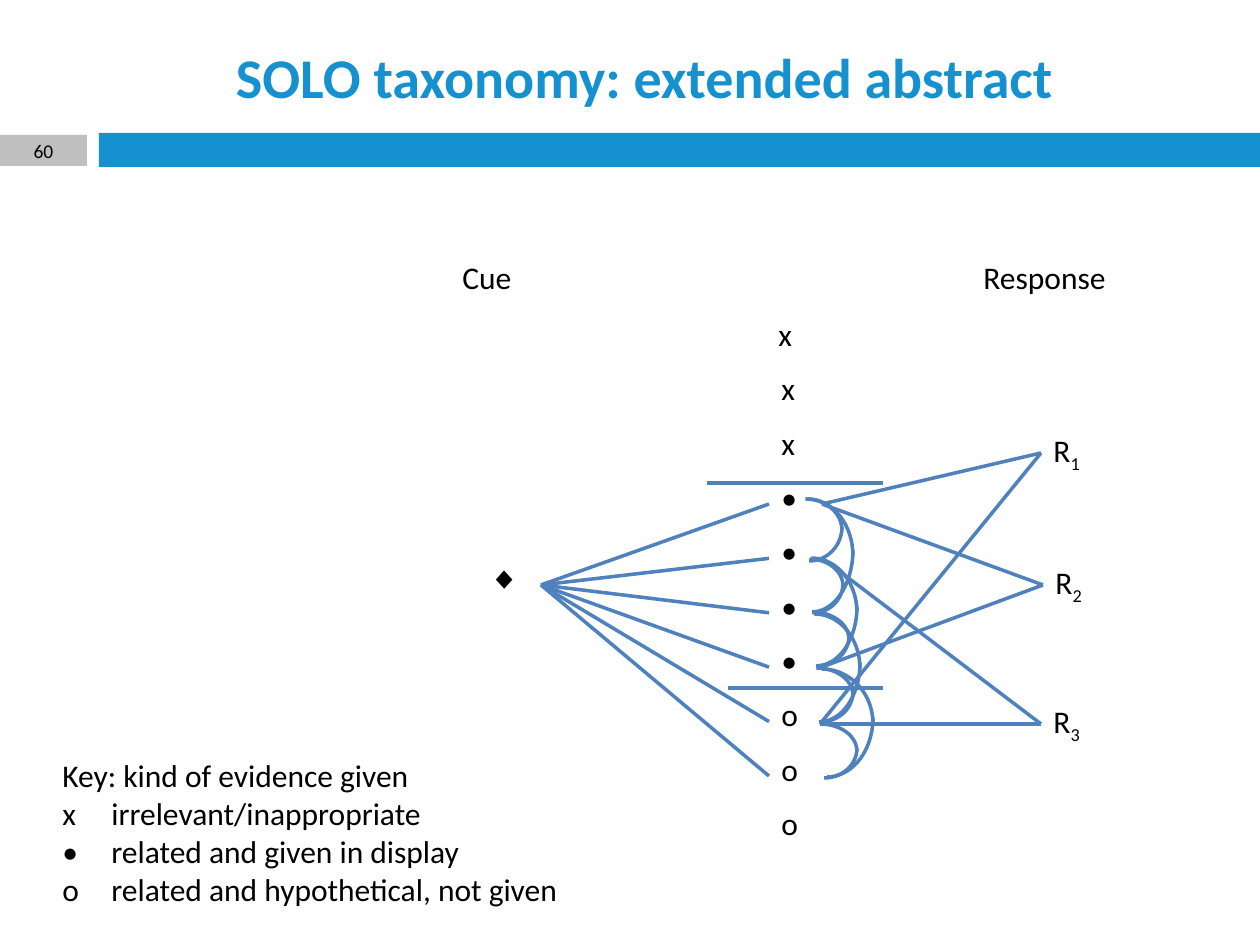
import dataclasses

import pptx
import pptx.dml.color
import pptx.enum.shapes
import pptx.enum.text
import pptx.oxml.ns
import pptx.util
from lxml import etree

SHAPES = pptx.enum.shapes.MSO_SHAPE
ALIGN = pptx.enum.text.PP_ALIGN
ANCHOR = pptx.enum.text.MSO_ANCHOR
EMU_PER_PX = 914400 / 126


@dataclasses.dataclass(frozen=True)
class Theme:
    accent: str = "1691D0"
    grey: str = "BFBFBF"
    stroke: str = "4F81BD"
    ink: str = "000000"
    font: str = "Calibri"
    symbol_font: str = "Arial"
    title_size: float = 32
    body_size: float = 18
    number_size: float = 11.1
    stroke_width: float = 2


def emu(*lengths):
    return [pptx.util.Emu(round(length * EMU_PER_PX)) for length in lengths]


def rgb(code):
    return pptx.dml.color.RGBColor.from_string(code)


def add_child(parent, tag, **attributes):
    return etree.SubElement(parent, pptx.oxml.ns.qn(tag), **attributes)


def write(para, text, *, font, size, color, bold=False, baseline=None):
    span = para.add_run()
    span.text = text
    span.font.name = font
    span.font.size = pptx.util.Pt(size)
    span.font.bold = bold
    span.font.color.rgb = rgb(color)
    if baseline is not None:
        span.font._element.set("baseline", str(baseline * 1000))


class Painter:
    def __init__(self, page, theme):
        self.page = page
        self.theme = theme

    def text(self, left, top, width, height, lines, *, size=None, font=None, color=None,
             bold=False, align=ALIGN.LEFT, anchor=ANCHOR.TOP, tab=None, subscript=None):
        """Write one paragraph per line; the subscript follows the last one."""
        theme = self.theme
        style = dict(font=font or theme.font, size=size or theme.body_size,
                     color=color or theme.ink, bold=bold)
        box = self.page.shapes.add_textbox(*emu(left, top, width, height))
        frame = box.text_frame
        frame.word_wrap = True
        frame.vertical_anchor = anchor
        for index, line in enumerate(lines):
            para = frame.add_paragraph() if index else frame.paragraphs[0]
            para.alignment = align
            if tab:
                stops = add_child(para._p.get_or_add_pPr(), "a:tabLst")
                add_child(stops, "a:tab", pos=str(emu(tab)[0]), algn="l")
            write(para, line, **style)
        if subscript:
            write(para, subscript, baseline=-25, **style)

    def bar(self, left, top, width, height, color):
        bar = self.page.shapes.add_shape(SHAPES.RECTANGLE, *emu(left, top, width, height))
        bar.shadow.inherit = False
        bar.fill.solid()
        bar.fill.fore_color.rgb = rgb(color)
        bar.line.fill.background()

    def stroke(self, shape):
        shape.line.color.rgb = rgb(self.theme.stroke)
        shape.line.width = pptx.util.Pt(self.theme.stroke_width)

    def line(self, start, end):
        line = self.page.shapes.add_connector(
            pptx.enum.shapes.MSO_CONNECTOR.STRAIGHT, *emu(*start, *end))
        self.stroke(line)
        add_child(line._element.spPr, "a:effectLst")

    def arc(self, left, top, width, height, rotation=0):
        arc = self.page.shapes.add_shape(SHAPES.ARC, *emu(left, top, width, height))
        arc.shadow.inherit = False
        arc.fill.background()
        arc.rotation = rotation
        self.stroke(arc)

    def loop(self, left, top, width, height):
        """Join an upper and a lower quarter arc that share their right and bottom edges."""
        self.arc(left, top, width, height)
        lower_width, lower_height = width * 0.9, height * 1.1
        center_x = left + width - lower_width / 2
        center_y = top + height - lower_height / 2
        # The quarter turn swaps the sides of the box.
        self.arc(center_x - lower_height / 2, center_y - lower_width / 2,
                 lower_height, lower_width, rotation=90)


def draw_header(painter):
    theme = painter.theme
    painter.bar(99, 133, 1161, 34, theme.accent)
    painter.bar(0, 135, 87, 31, theme.grey)
    painter.text(99, 33, 1091, 86, ["SOLO taxonomy: extended abstract"],
                 size=theme.title_size, color=theme.accent, bold=True,
                 align=ALIGN.CENTER, anchor=ANCHOR.MIDDLE)
    painter.text(0, 135, 87, 31, ["60"], size=theme.number_size,
                 align=ALIGN.CENTER, anchor=ANCHOR.MIDDLE)


def draw_evidence(painter):
    for row, mark in enumerate("xxx••••ooo"):
        painter.text(769 if row else 766, 309 + row * 54.3, 53, 63, [mark])
    for left, y in ((707, 483), (728, 688)):
        painter.line((left, y), (883, y))


def draw_labels(painter):
    painter.text(450, 252, 126, 63, ["Cue"])
    painter.text(971, 252, 221, 63, ["Response"])
    painter.text(476, 553, 64, 63, ["◆"], font=painter.theme.symbol_font)
    painter.text(50, 750, 525, 165, [
        "Key: kind of evidence given",
        "x\tirrelevant/inappropriate",
        "•\trelated and given in display",
        "o\trelated and hypothetical, not given",
    ], tab=49)


def draw_links(painter):
    for row in range(6):
        painter.line((541, 585), (769, 504 + row * 54.4))

    loops = [
        (769, 499, 73, 62), (776, 559, 67, 54), (776, 612, 73, 54),
        (766, 558, 91, 108), (762, 499, 91, 113), (780, 668, 73, 54),
        (784, 724, 73, 54), (769, 614, 91, 108), (771, 669, 102, 108),
    ]
    for loop in loops:
        painter.loop(*loop)

    first, second, fourth, fifth = (822, 504), (822, 558), (822, 667), (820, 724)
    responses = [
        ("1", (1041, 453), (first, fifth)),
        ("2", (1043, 585), (first, fourth)),
        ("3", (1041, 724), (second, fifth)),
    ]
    for number, (x, y), sources in responses:
        painter.text(x, y - 32, 82, 63, ["R"], subscript=number, anchor=ANCHOR.MIDDLE)
        for source in sources:
            painter.line(source, (x, y))


def main():
    deck = pptx.Presentation()
    deck.slide_width, deck.slide_height = emu(1260, 945)
    page = deck.slides.add_slide(deck.slide_layouts[6])
    painter = Painter(page, Theme())
    draw_header(painter)
    draw_evidence(painter)
    draw_labels(painter)
    draw_links(painter)
    deck.save("out.pptx")


if __name__ == "__main__":
    main()
